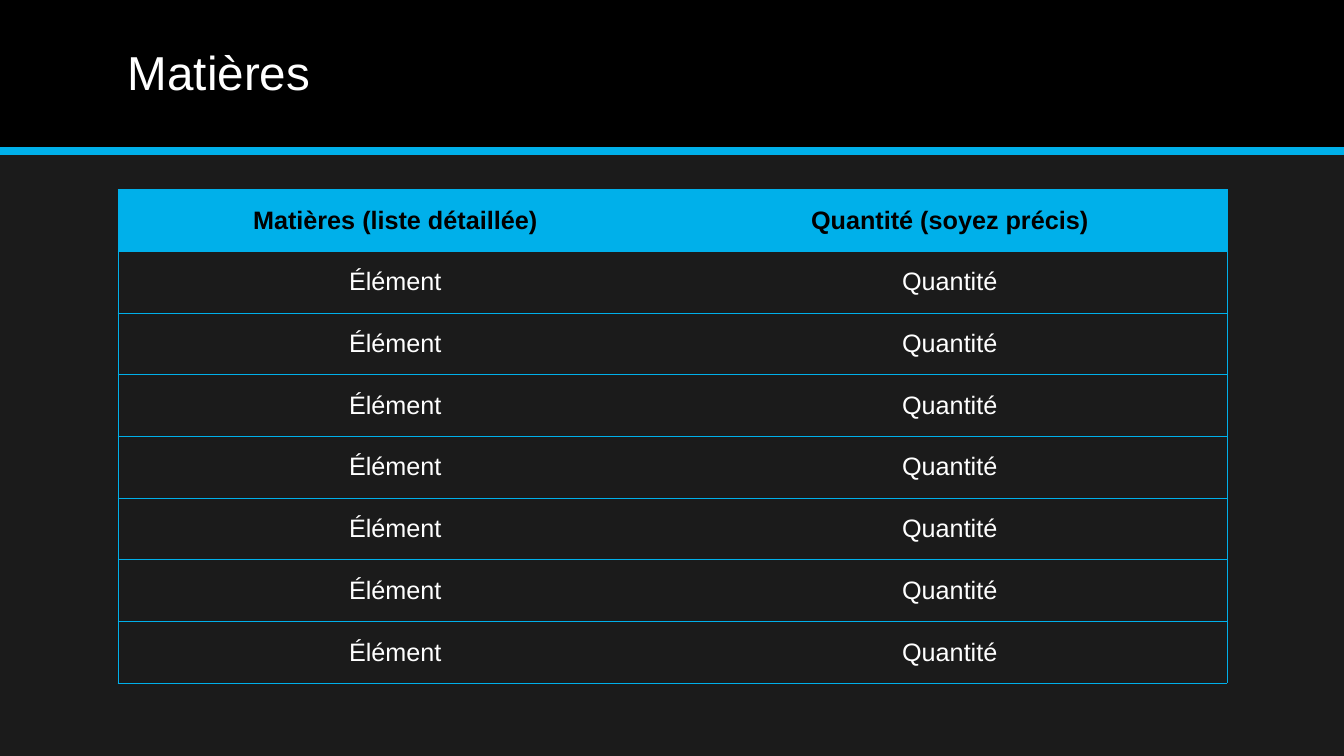
from lxml import etree
from pptx import Presentation
from pptx.dml.color import RGBColor
from pptx.enum import shapes, text
from pptx.oxml.ns import qn
from pptx.util import Inches, Pt

TITLE = "Matières"
HEADER = ("Matières (liste détaillée)", "Quantité (soyez précis)")
ITEMS = [("Élément", "Quantité")] * 7
COLORS = {"page": "1B1B1B", "band": "000000", "accent": "00B0EA",
          "light": "FFFFFF", "dark": "000000"}
FONT = "Arial"
WIDTH, HEIGHT, BAND = 13.33, 7.5, 1.5
LEFT, CONTENT_WIDTH = 1.17, 11
TABLE_TOP, TABLE_HEIGHT = 1.88, 4.9


def color(name):
    return RGBColor.from_string(COLORS[name])


def paint(fill, name):
    fill.solid()
    fill.fore_color.rgb = color(name)


def write(frame, wording, ink, **formats):
    frame.word_wrap = True
    frame.vertical_anchor = text.MSO_ANCHOR.MIDDLE
    para = frame.paragraphs[0]
    span = para.add_run()
    span.text = wording
    span.font.color.rgb = color(ink)
    for key, value in {"name": FONT, **formats}.items():
        setattr(span.font, key, value)
    return para


def add_borders(cell, visible):
    """Draw the sides listed in visible and hide the others."""
    properties = cell._tc.get_or_add_tcPr()
    for place, side in enumerate("LRTB"):
        line = etree.Element(qn(f"a:ln{side}"), w=str(Pt(0.5)))
        if side in visible:
            fill = etree.SubElement(line, qn("a:solidFill"))
            etree.SubElement(fill, qn("a:srgbClr"), val=COLORS["accent"])
        else:
            etree.SubElement(line, qn("a:noFill"))
        properties.insert(place, line)


def add_title_band(page):
    band = page.shapes.add_shape(shapes.MSO_SHAPE.RECTANGLE, 0, 0,
                                 Inches(WIDTH), Inches(BAND))
    band.shadow.inherit = False
    paint(band.fill, "band")
    band.line.fill.background()

    rule = page.shapes.add_connector(shapes.MSO_CONNECTOR.STRAIGHT, 0, Inches(BAND),
                                     Inches(WIDTH), Inches(BAND))
    rule.line.color.rgb = color("accent")
    rule.line.width = Pt(6)
    etree.SubElement(rule._element.spPr, qn("a:effectLst"))

    box = page.shapes.add_textbox(Inches(LEFT), Inches(0.14),
                                  Inches(CONTENT_WIDTH), Inches(1.2))
    write(box.text_frame, TITLE, "light", size=Pt(34)).line_spacing = 0.9


def add_materials_table(page):
    rows = [HEADER, *ITEMS]
    table = page.shapes.add_table(len(rows), len(HEADER), Inches(LEFT), Inches(TABLE_TOP),
                                  Inches(CONTENT_WIDTH), Inches(TABLE_HEIGHT)).table
    table.horz_banding = False
    for r, row in enumerate(rows):
        is_header = r == 0
        for c, wording in enumerate(row):
            cell = table.cell(r, c)
            cell.vertical_anchor = text.MSO_ANCHOR.MIDDLE
            para = write(cell.text_frame, wording, "dark" if is_header else "light",
                         size=Pt(18), bold=is_header)
            para.alignment = text.PP_ALIGN.CENTER
            if is_header:
                paint(cell.fill, "accent")
            else:
                cell.fill.background()
            add_borders(cell, "TBL" if c == 0 else "TBR")


def main():
    deck = Presentation()
    deck.slide_width, deck.slide_height = Inches(WIDTH), Inches(HEIGHT)
    page = deck.slides.add_slide(deck.slide_layouts[6])
    paint(page.background.fill, "page")
    add_title_band(page)
    add_materials_table(page)
    deck.save("out.pptx")


if __name__ == "__main__":
    main()
